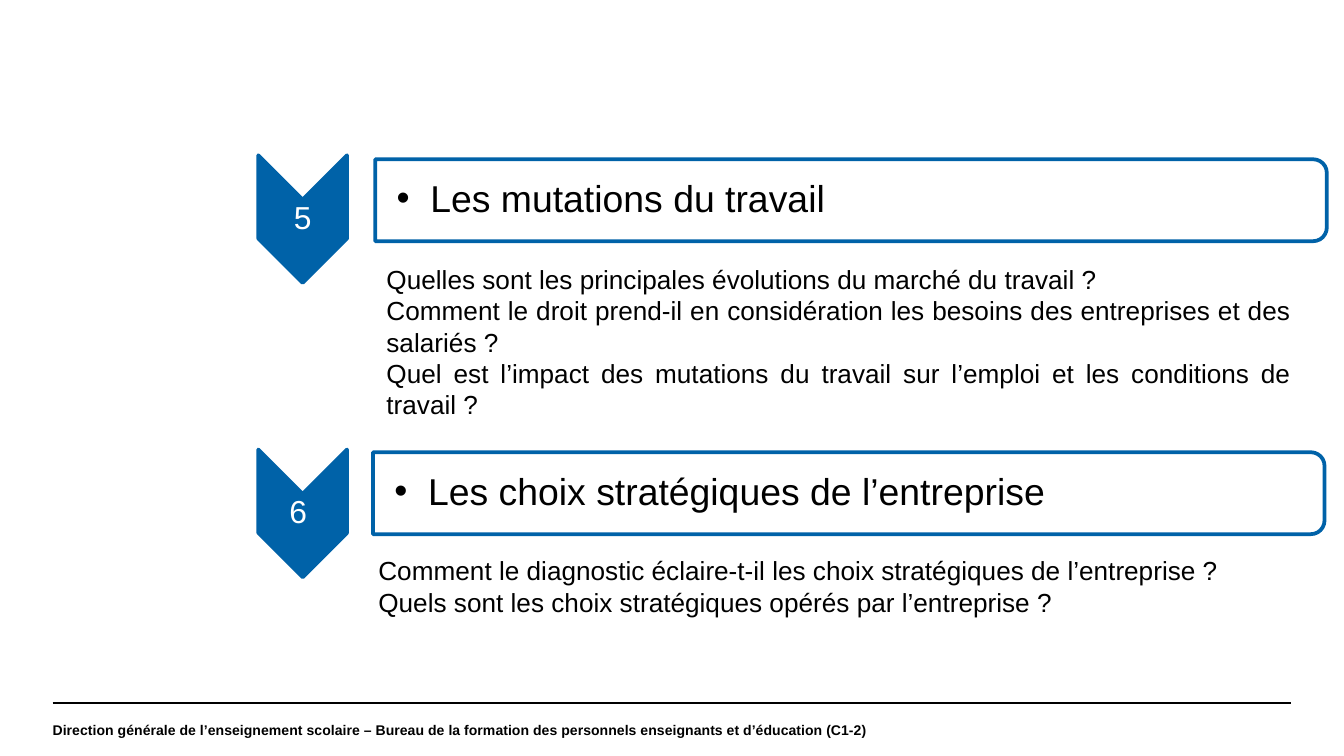
import dataclasses

import lxml.etree
import pptx
import pptx.dml.color
import pptx.enum.shapes
import pptx.enum.text
import pptx.oxml.ns
import pptx.util

COLORS = {"blue": "0062A8", "white": "FFFFFF", "black": "000000"}
CELL = pptx.util.Inches(0.1)
COLUMNS, ROWS = 100, 56.25
ALIGN = pptx.enum.text.PP_ALIGN
PRESETS = pptx.enum.shapes.MSO_SHAPE

THEMES = [
    {
        "number": "5",
        "title": "Les mutations du travail",
        "questions": [
            "Quelles sont les principales évolutions du marché du travail ?",
            "Comment le droit prend-il en considération les besoins des entreprises et des salariés ?",
            "Quel est l’impact des mutations du travail sur l’emploi et les conditions de travail ?",
        ],
    },
    {
        "number": "6 ",
        "title": "Les choix stratégiques de l’entreprise",
        "questions": [
            "Comment le diagnostic éclaire-t-il les choix stratégiques de l’entreprise ?",
            "Quels sont les choix stratégiques opérés par l’entreprise ?",
        ],
    },
]
FOOTER = (
    "Direction générale de l’enseignement scolaire – Bureau de la formation "
    "des personnels enseignants et d’éducation (C1-2)"
)


@dataclasses.dataclass
class Box:
    """Area of the slide in grid columns and rows."""

    left: float
    top: float
    width: float
    height: float

    def emu(self):
        """Return the four lengths in slide units."""
        return [round(cells * CELL) for cells in dataclasses.astuple(self)]

    def turned(self):
        """Return the box that covers this one after a quarter turn."""
        shift = (self.width - self.height) / 2
        return Box(self.left + shift, self.top - shift, self.height, self.width)

    def inset(self, across, down):
        """Return this box with margins on each side."""
        return Box(self.left + across, self.top + down,
                   self.width - 2 * across, self.height - 2 * down)


def rgb(name):
    """Return a named palette colour."""
    return pptx.dml.color.RGBColor.from_string(COLORS[name])


def add_turned_shape(slide, box, preset, fill):
    """Draw a blue-edged preset shape turned to fill the box."""
    outline = slide.shapes.add_shape(preset, *box.turned().emu())
    outline.rotation = 90
    outline.shadow.inherit = False
    outline.fill.solid()
    outline.fill.fore_color.rgb = rgb(fill)
    outline.line.color.rgb = rgb("blue")
    outline.line.width = pptx.util.Pt(2)
    return outline


def add_text(slide, box, lines, size, color="black", align=ALIGN.LEFT,
             margins=(0, 0), bold=False, bullet=False, spacing=1.0, middle=True):
    """Place paragraphs of one style in the box."""
    frame = slide.shapes.add_textbox(*box.emu()).text_frame
    frame.word_wrap = True
    if middle:
        frame.vertical_anchor = pptx.enum.text.MSO_ANCHOR.MIDDLE
    else:
        frame.auto_size = pptx.enum.text.MSO_AUTO_SIZE.SHAPE_TO_FIT_TEXT
    frame.margin_left = frame.margin_right = round(margins[0] * CELL)
    frame.margin_top = frame.margin_bottom = round(margins[1] * CELL)
    frame.text = "\n".join(lines)
    for paragraph in frame.paragraphs:
        paragraph.alignment = align
        paragraph.line_spacing = spacing
        if bullet:
            add_bullet(paragraph)
        for run in paragraph.runs:
            run.font.name = "Arial"
            run.font.size = pptx.util.Pt(size)
            run.font.bold = bold
            run.font.color.rgb = rgb(color)
    return frame


def add_bullet(paragraph):
    """Give the paragraph a round bullet and a hanging indent."""
    paragraph.level = 1
    properties = paragraph._p.get_or_add_pPr()
    hang = round(2.5 * CELL)
    properties.set("marL", str(hang))
    properties.set("indent", str(-hang))
    for tag, key, setting in [("a:buFont", "typeface", "Arial"), ("a:buChar", "char", "•")]:
        lxml.etree.SubElement(properties, pptx.oxml.ns.qn(tag)).set(key, setting)


def add_chevron(slide, box, number):
    """Draw the downward chevron with its number."""
    add_turned_shape(slide, box, PRESETS.CHEVRON, "blue")
    add_text(slide, box.inset(0, 3.35), [number], 17, "white", ALIGN.CENTER,
             (0.1, 0.1), spacing=0.9)


def add_banner(slide, box, title):
    """Draw the rounded banner with its bulleted title."""
    banner = add_turned_shape(slide, box, PRESETS.ROUND_2_SAME_RECTANGLE, "white")
    tint = banner.fill._xPr.find(".//" + pptx.oxml.ns.qn("a:srgbClr"))
    lxml.etree.SubElement(tint, pptx.oxml.ns.qn("a:alpha")).set("val", "90000")
    title_box = Box(box.left, box.top + 0.3, box.width - 0.3, box.height - 0.6)
    frame = add_text(slide, title_box, [title], 20, margins=(0.1, 0.1),
                     bullet=True, spacing=0.9)
    frame.margin_left = round(1.6 * CELL)


def add_theme(slide, box, theme, banner_at, questions_at):
    """Place a chevron, banner and questions at offsets within the box."""
    add_chevron(slide, Box(box.left, box.top, 6.6, 9.5), theme["number"])
    add_banner(slide, Box(box.left + banner_at[0], box.top + banner_at[1], 70.8, 6.1),
               theme["title"])
    across, down = questions_at
    add_text(slide, Box(box.left + across, box.top + down, 69.3, box.height - down),
             theme["questions"], 14, align=ALIGN.JUSTIFY, margins=(1, 0.5), middle=False)


def add_footer(slide, box):
    """Draw the rule along the top of the box and the office name below."""
    left, top, width, _ = box.emu()
    rule = slide.shapes.add_connector(
        pptx.enum.shapes.MSO_CONNECTOR.STRAIGHT, left, top, left + width, top)
    rule.line.color.rgb = rgb("black")
    rule.line.width = pptx.util.Pt(0.8)
    lxml.etree.SubElement(rule._element.spPr, pptx.oxml.ns.qn("a:effectLst"))
    add_text(slide, Box(box.left, box.top, box.width + 1.1, box.height),
             [FOOTER], 7.5, bold=True)


def main():
    """Build and save the slide."""
    deck = pptx.Presentation()
    deck.slide_width, deck.slide_height = round(COLUMNS * CELL), round(ROWS * CELL)
    slide = deck.slides.add_slide(deck.slide_layouts[6])
    add_footer(slide, Box(3.92, 52.32, COLUMNS - 7.84, ROWS - 52.32))
    add_theme(slide, Box(19.22, 11.55, 79.5, 20.35), THEMES[0], (8.7, 0.3), (8.55, 7.55))
    add_theme(slide, Box(19.22, 33.45, 79.3, 13.05), THEMES[1], (8.53, 0.2), (7.95, 7.33))
    deck.save("out.pptx")


if __name__ == "__main__":
    main()
